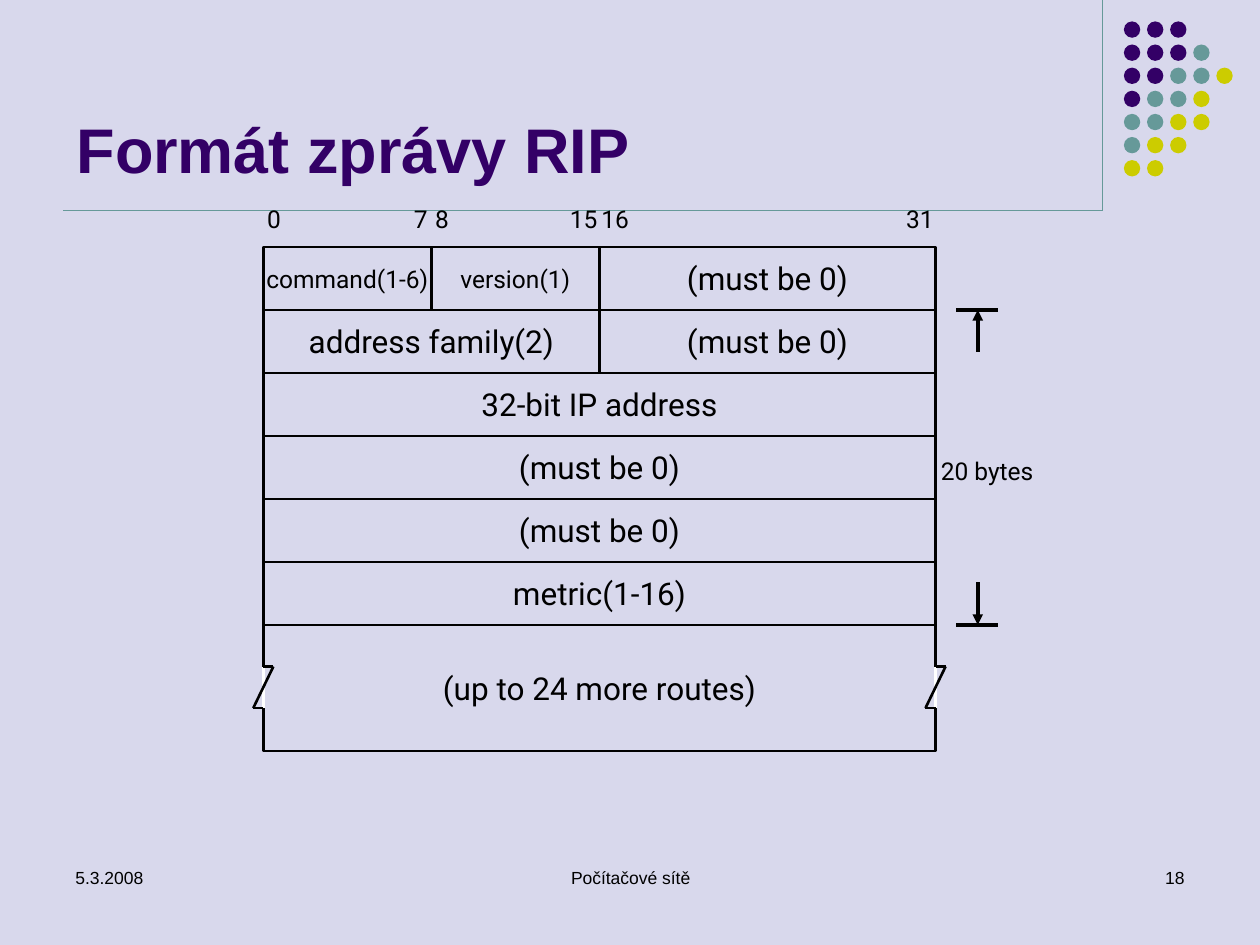
from dataclasses import dataclass

from lxml import etree
from pptx import Presentation
from pptx.dml.color import RGBColor
from pptx.enum.shapes import MSO_CONNECTOR as CONN, MSO_SHAPE as SHAPE
from pptx.enum.text import MSO_ANCHOR as ANCHOR, PP_ALIGN as ALIGN
from pptx.oxml.ns import qn
from pptx.util import Inches, Pt


@dataclass(frozen=True)
class Theme:
    back: str = "D8D8EC"
    purple: str = "330066"
    teal: str = "669999"
    olive: str = "CCCC00"
    ink: str = "000000"
    white: str = "FFFFFF"
    head_font: str = "Arial"
    body_font: str = "Roboto"
    title: int = 36
    field: int = 18
    small: int = 14
    footer: int = 10


T = Theme()


def add_text(sp, text, size, font=T.body_font, color=T.ink, align=ALIGN.CENTER,
             anchor=ANCHOR.TOP, bold=False, wrap=True, inset=True):
    tf = sp.text_frame
    tf.word_wrap = wrap
    tf.vertical_anchor = anchor
    if not inset:
        tf.margin_left = tf.margin_right = tf.margin_top = tf.margin_bottom = 0
    p = tf.paragraphs[0]
    p.alignment = align
    r = p.add_run()
    r.text = text
    r.font.size = Pt(size)
    r.font.name = font
    r.font.bold = bold
    r.font.color.rgb = RGBColor.from_string(color)


def add_line(x1, y1, x2, y2, color=T.ink, width=1.5, arrow=False):
    c = s.shapes.add_connector(CONN.STRAIGHT, Inches(x1), Inches(y1), Inches(x2), Inches(y2))
    c.line.color.rgb = RGBColor.from_string(color)
    c.line.width = Pt(width)
    if arrow:
        etree.SubElement(c.line._get_or_add_ln(), qn("a:tailEnd"), type="triangle")
    etree.SubElement(c._element.spPr, qn("a:effectLst"))


prs = Presentation()
prs.slide_width, prs.slide_height = Inches(10), Inches(7.5)
s = prs.slides.add_slide(prs.slide_layouts[6])
s.background.fill.solid()
s.background.fill.fore_color.rgb = RGBColor.from_string(T.back)

# Corner rules and dot pattern
add_line(8.75, 0, 8.75, 1.67, T.teal, 0.75)
add_line(0.5, 1.67, 8.75, 1.67, T.teal, 0.75)
dot_colors = {"P": T.purple, "T": T.teal, "O": T.olive}
dot_rows = ["PPP", "PPPT", "PPTTO", "PTTO", "TTOO", "TOO", "OO"]
DOT, DOT_STEP = 0.13, 0.1835
for row, dots in enumerate(dot_rows):
    for col, key in enumerate(dots):
        sp = s.shapes.add_shape(SHAPE.OVAL, Inches(8.92 + col * DOT_STEP),
                                Inches(0.17 + row * DOT_STEP), Inches(DOT), Inches(DOT))
        sp.shadow.inherit = False
        sp.fill.solid()
        sp.fill.fore_color.rgb = RGBColor.from_string(dot_colors[key])
        sp.line.fill.background()

# Title
sp = s.shapes.add_textbox(Inches(0.51), Inches(0.28), Inches(9), Inches(1.25))
add_text(sp, "Formát zprávy RIP", T.title, T.head_font, T.purple, ALIGN.LEFT,
         ANCHOR.BOTTOM, bold=True)

# Footer
for x, w, text, align in [(0.5, 2.33, "5.3.2008", ALIGN.LEFT),
                          (3.42, 3.17, "Počítačové sítě", ALIGN.CENTER),
                          (7.17, 2.33, "18", ALIGN.RIGHT)]:
    sp = s.shapes.add_textbox(Inches(x), Inches(6.83), Inches(w), Inches(0.5))
    add_text(sp, text, T.footer, T.head_font, align=align)

# Message fields: first bit, bit count, row, rows high, text, size
LEFT, TOP, ROW, WIDTH = 2.09, 1.96, 0.5, 5.335
BIT = WIDTH / 32
RIGHT = LEFT + WIDTH
fields = [
    (0, 8, 0, 1, "command(1-6)", T.small),
    (8, 8, 0, 1, "version(1)", T.small),
    (16, 16, 0, 1, "(must be 0)", T.field),
    (0, 16, 1, 1, "address family(2)", T.field),
    (16, 16, 1, 1, "(must be 0)", T.field),
    (0, 32, 2, 1, "32-bit IP address", T.field),
    (0, 32, 3, 1, "(must be 0)", T.field),
    (0, 32, 4, 1, "(must be 0)", T.field),
    (0, 32, 5, 1, "metric(1-16)", T.field),
    (0, 32, 6, 2, "(up to 24 more routes)", T.field),
]
for bit, bits, row, rows, text, size in fields:
    sp = s.shapes.add_shape(SHAPE.RECTANGLE, Inches(LEFT + bit * BIT), Inches(TOP + row * ROW),
                            Inches(bits * BIT), Inches(rows * ROW))
    sp.shadow.inherit = False
    sp.fill.background()
    sp.line.color.rgb = RGBColor.from_string(T.ink)
    sp.line.width = Pt(1.5)
    add_text(sp, text, size, anchor=ANCHOR.MIDDLE, wrap=False)

# Bit numbers: a field's first bit starts at its left edge, its last ends at its right
for first, last in [(0, 7), (8, 15), (16, 31)]:
    for bit in (first, last):
        w = 0.17 if bit < 10 else 0.25
        x = LEFT + bit * BIT if bit == first else LEFT + (bit + 1) * BIT - w
        sp = s.shapes.add_textbox(Inches(x), Inches(1.62), Inches(w), Inches(0.23))
        add_text(sp, str(bit), T.small, wrap=False, inset=False)

# Break marks on both sides of the last field
CUT_TOP, CUT_BOTTOM, CUT = 5.29, 5.62, 0.08
for x in (LEFT, RIGHT):
    add_line(x, CUT_TOP, x, CUT_BOTTOM, T.white, 2)
    add_line(x, CUT_TOP, x + CUT, CUT_TOP)
    add_line(x - CUT, CUT_BOTTOM, x, CUT_BOTTOM)
    add_line(x + CUT, CUT_TOP, x - CUT, CUT_BOTTOM)

# Size marker for one route entry
for y, start in [(TOP + ROW, 2.79), (TOP + 6 * ROW, 4.62)]:
    add_line(7.92, y, 7.59, y, width=2)
    add_line(7.76, start, 7.76, y, width=2, arrow=True)
sp = s.shapes.add_textbox(Inches(7.42), Inches(3.62), Inches(0.83), Inches(0.23))
add_text(sp, "20 bytes", T.small, wrap=False, inset=False)

prs.save("out.pptx")
